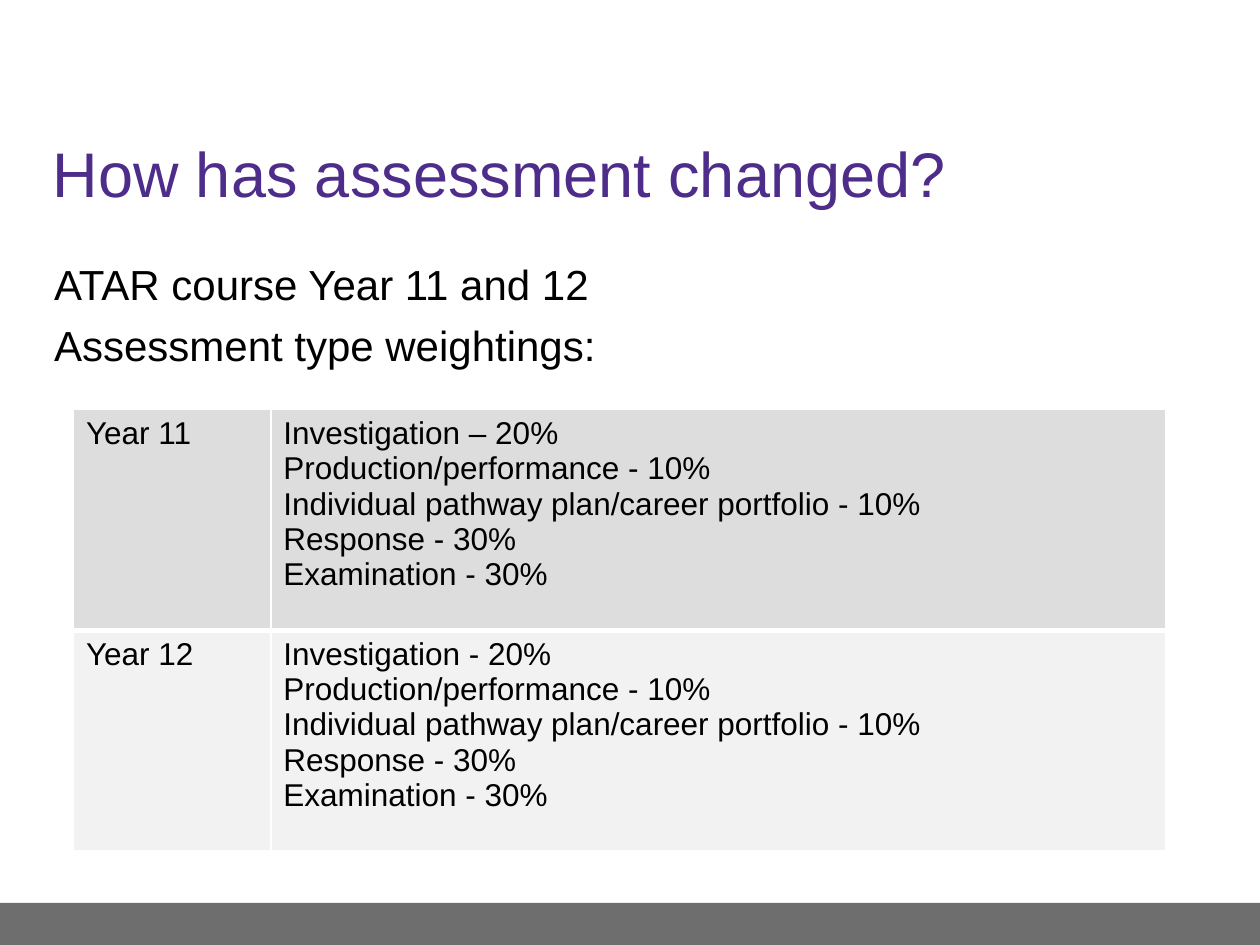
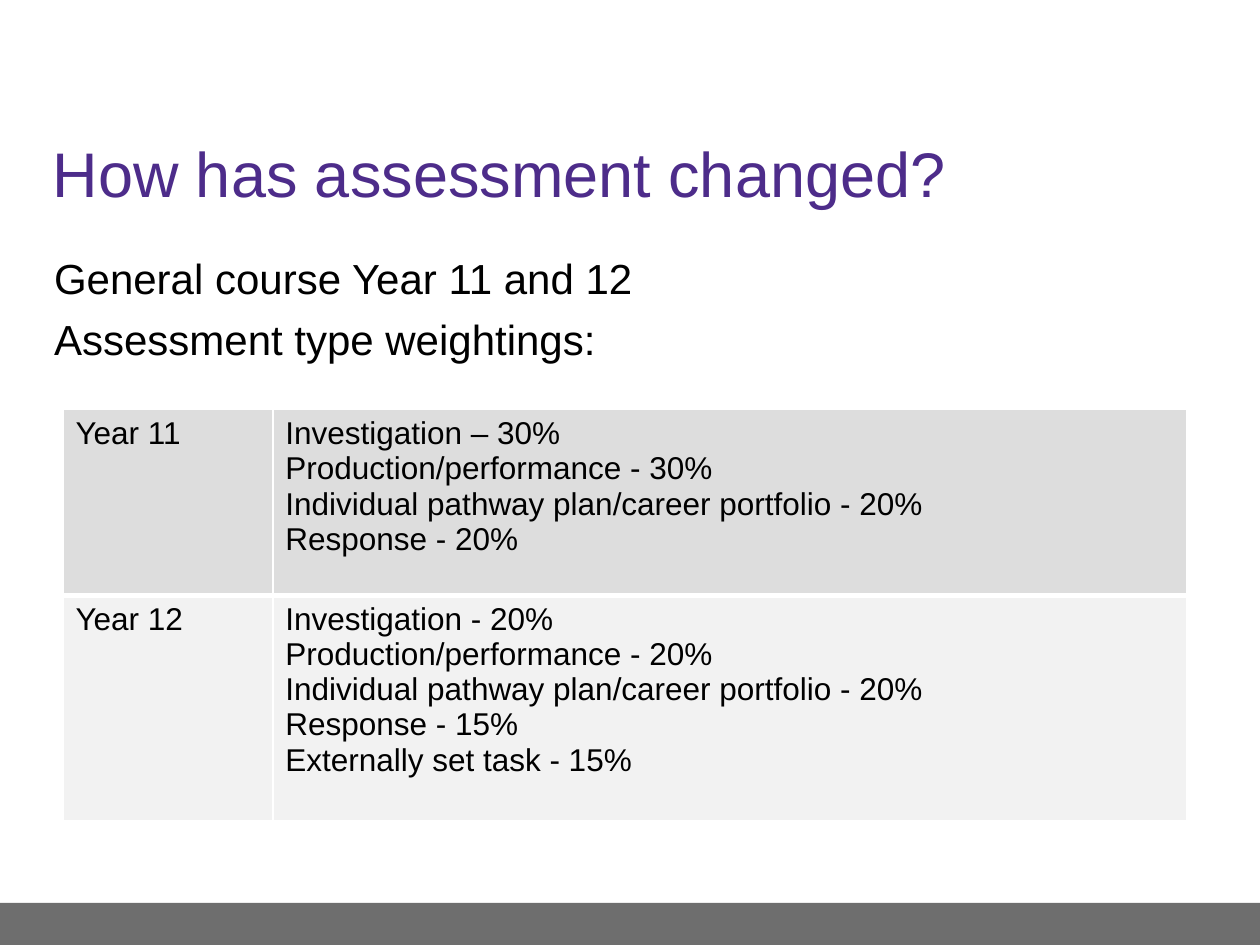
"""Build two slides on assessment weightings for the ATAR and General courses."""
from dataclasses import dataclass

from lxml.etree import SubElement
from pptx import Presentation
from pptx.dml.color import RGBColor
from pptx.enum.shapes import MSO_SHAPE
from pptx.enum.text import MSO_ANCHOR
from pptx.oxml.ns import qn
from pptx.util import Cm, Pt


@dataclass(frozen=True)
class Theme:
    font: str = "Arial"
    purple: str = "4D2C8A"
    black: str = "000000"
    white: str = "FFFFFF"
    footer: str = "6E6E6E"
    row_fills: tuple = ("DDDDDD", "F2F2F2")
    title_size: int = 36
    body_size: int = 24
    table_size: int = 18
    thin_border: int = 1
    thick_border: int = 3


theme = Theme()


def write_lines(text_frame, lines, size, color, gap=0):
    text_frame.word_wrap = True
    for index, line in enumerate(lines):
        paragraph = text_frame.add_paragraph() if index else text_frame.paragraphs[0]
        paragraph.text = line
        paragraph.space_before = Pt(gap if index else 0)
        paragraph.font.name = theme.font
        paragraph.font.size = Pt(size)
        paragraph.font.color.rgb = RGBColor.from_string(color)


def add_border(cell, side, width):
    properties = cell._tc.get_or_add_tcPr()
    line = SubElement(properties, qn(f"a:{side}"), w=str(Pt(width)))
    fill = SubElement(line, qn("a:solidFill"))
    SubElement(fill, qn("a:srgbClr"), val=theme.white)


courses = [
    {
        "name": "ATAR",
        "body_top": 4.98,
        "table_left": 1.48,
        "column_widths": (3.98, 18.03),
        "row_heights": (4.45, 4.45),
        "weightings": {
            "Year 11": [
                "Investigation – 20%",
                "Production/performance - 10%",
                "Individual pathway plan/career portfolio - 10%",
                "Response - 30%",
                "Examination - 30%",
            ],
            "Year 12": [
                "Investigation - 20%",
                "Production/performance - 10%",
                "Individual pathway plan/career portfolio - 10%",
                "Response - 30%",
                "Examination - 30%",
            ],
        },
    },
    {
        "name": "General",
        "body_top": 4.87,
        "table_left": 1.27,
        "column_widths": (4.23, 18.42),
        "row_heights": (3.74, 4.54),
        "weightings": {
            "Year 11": [
                "Investigation – 30%",
                "Production/performance - 30%",
                "Individual pathway plan/career portfolio - 20%",
                "Response - 20%",
            ],
            "Year 12": [
                "Investigation - 20%",
                "Production/performance - 20%",
                "Individual pathway plan/career portfolio - 20%",
                "Response - 15%",
                "Externally set task - 15%",
            ],
        },
    },
]

presentation = Presentation()
presentation.slide_width = Cm(25.4)
presentation.slide_height = Cm(19.05)

for course in courses:
    slide = presentation.slides.add_slide(presentation.slide_layouts[6])

    footer = slide.shapes.add_shape(
        MSO_SHAPE.RECTANGLE, Cm(0), Cm(18.2), Cm(25.4), Cm(0.85)
    )
    footer.shadow.inherit = False
    footer.fill.solid()
    footer.fill.fore_color.rgb = RGBColor.from_string(theme.footer)
    footer.line.fill.background()

    title = slide.shapes.add_textbox(Cm(0.81), Cm(2.31), Cm(23.75), Cm(2.34))
    title.text_frame.vertical_anchor = MSO_ANCHOR.MIDDLE
    write_lines(
        title.text_frame,
        ["How has assessment changed?"],
        theme.title_size,
        theme.purple,
    )

    body = slide.shapes.add_textbox(
        Cm(0.84), Cm(course["body_top"]), Cm(23.7), Cm(12.8)
    )
    body.text_frame.margin_top = Cm(0.23)
    write_lines(
        body.text_frame,
        [f"{course['name']} course Year 11 and 12", "Assessment type weightings:"],
        theme.body_size,
        theme.black,
        gap=6,
    )

    widths, heights = course["column_widths"], course["row_heights"]
    table = slide.shapes.add_table(
        len(heights),
        len(widths),
        Cm(course["table_left"]),
        Cm(8.26),
        Cm(sum(widths)),
        Cm(sum(heights)),
    ).table
    table.first_row = False
    table.horz_banding = False
    for column, width in zip(table.columns, widths):
        column.width = Cm(width)

    for row_index, (year, weightings) in enumerate(course["weightings"].items()):
        row = table.rows[row_index]
        row.height = Cm(heights[row_index])
        divider_side = "lnT" if row_index else "lnB"
        for cell, lines in zip(row.cells, ([year], weightings)):
            write_lines(cell.text_frame, lines, theme.table_size, theme.black)
            for side in ("lnL", "lnR", "lnT", "lnB"):
                is_divider = side == divider_side
                add_border(
                    cell, side, theme.thick_border if is_divider else theme.thin_border
                )
            cell.fill.solid()
            cell.fill.fore_color.rgb = RGBColor.from_string(theme.row_fills[row_index])

presentation.save("out.pptx")
